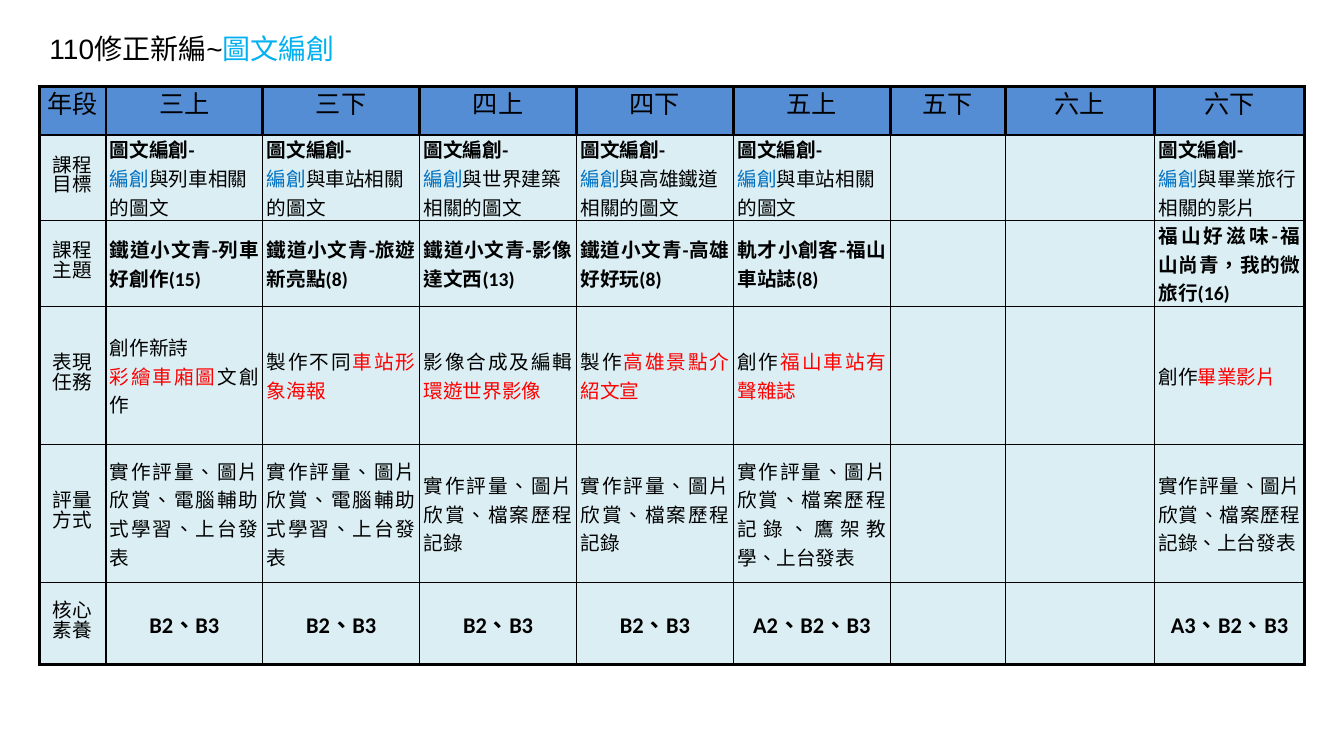
from lxml.etree import SubElement
from pptx import Presentation
from pptx.dml.color import RGBColor
from pptx.enum.text import MSO_ANCHOR, MSO_AUTO_SIZE, PP_ALIGN
from pptx.oxml.ns import qn
from pptx.util import Inches, Pt

BLACK = RGBColor(0x00, 0x00, 0x00)
SKY = RGBColor(0x00, 0xB0, 0xF0)
BLUE = RGBColor(0x00, 0x70, 0xC0)
RED = RGBColor(0xFF, 0x00, 0x00)
HEADER_FILL = RGBColor(0x54, 0x8D, 0xD4)
BODY_FILL = RGBColor(0xDA, 0xEE, 0xF3)

# Content: [brackets] enclose highlighted words, a line break starts a paragraph
TITLE = "110修正新編~[圖文編創]"
HEADERS = ["年段", "三上", "三下", "四上", "四下", "五上", "五下", "六上", "六下"]
GOALS = ["列車相關的圖文", "車站相關的圖文", "世界建築相關的圖文",
         "高雄鐵道相關的圖文", "車站相關的圖文", "", "", "畢業旅行相關的影片"]
THEMES = ["鐵道小文青-列車好創作(15)", "鐵道小文青-旅遊新亮點(8)",
          "鐵道小文青-影像達文西(13)", "鐵道小文青-高雄好好玩(8)",
          "軌才小創客-福山車站誌(8)", "", "", "福山好滋味-福山尚青，我的微旅行(16)"]
TASKS = ["創作新詩\n[彩繪車廂圖]文創作", "製作不同[車站形象海報]",
         "影像合成及編輯[環遊世界影像]", "製作[高雄景點介紹文宣]",
         "創作[福山車站有聲雜誌]", "", "", "創作[畢業影片]"]
COMPUTER = "實作評量、圖片欣賞、電腦輔助式學習、上台發表"
RECORD = "實作評量、圖片欣賞、檔案歷程記錄"
ASSESSMENTS = [COMPUTER, COMPUTER, RECORD, RECORD, RECORD + "、鷹架教學、上台發表",
               "", "", RECORD + "、上台發表"]
COMPETENCIES = ["B2、B3"] * 4 + ["A2、B2、B3", "", "", "A3、B2、B3"]

# Rows: label, cells, alignment, size, number of bold paragraphs, highlight
ROWS = [
    ("課程\n目標", [goal and f"圖文編創-\n[編創]與{goal}" for goal in GOALS],
     PP_ALIGN.LEFT, 14, 1, BLUE),
    ("課程主題", THEMES, PP_ALIGN.JUSTIFY, 14, 1, BLACK),
    ("表現任務", TASKS, PP_ALIGN.JUSTIFY, 14, 0, RED),
    ("評量方式", ASSESSMENTS, PP_ALIGN.JUSTIFY, 14, 0, BLACK),
    ("核心\n素養", COMPETENCIES, PP_ALIGN.CENTER, 16, 1, BLACK),
]

# Grid in inches: five equal terms share what the other columns leave
LEFT, TOP, TABLE_WIDTH = 0.39, 0.86, 12.55
LABEL_WIDTH, LAST_WIDTHS = 0.66, [1.14, 1.48, 1.49]
TERM_WIDTH = (TABLE_WIDTH - LABEL_WIDTH - sum(LAST_WIDTHS)) / 5
COLUMN_WIDTHS = [LABEL_WIDTH] + [TERM_WIDTH] * 5 + LAST_WIDTHS
ROW_HEIGHTS = [0.48, 0.81, 0.81, 1.37, 1.37, 0.81]
THIN, THICK = 1, 2.25


def write(text_frame, text, font, size, align, highlight, bold_count=0, spacing=None):
    for index, line in enumerate(text.split("\n")):
        paragraph = text_frame.paragraphs[0] if index == 0 else text_frame.add_paragraph()
        paragraph.alignment = align
        # Keep punctuation inside the cell
        paragraph._p.get_or_add_pPr().set("hangingPunct", "0")
        if spacing:
            paragraph.line_spacing = spacing
        for position, part in enumerate(line.replace("]", "[").split("[")):
            if not part:
                continue
            run = paragraph.add_run()
            run.text = part
            run.font.name = font
            run.font.size = Pt(size)
            run.font.bold = index < bold_count
            run.font.color.rgb = highlight if position % 2 else BLACK
            # Traditional Chinese punctuation and line breaking
            run._r.get_or_add_rPr().set("lang", "zh-TW")


def set_borders(cell, widths):
    properties = cell._tc.get_or_add_tcPr()
    for index, (side, width) in enumerate(widths.items()):
        line = properties.makeelement(qn(f"a:ln{side}"), {"w": str(Pt(width))})
        fill = SubElement(line, qn("a:solidFill"))
        SubElement(fill, qn("a:srgbClr"), val=str(BLACK))
        properties.insert(index, line)


def fill_cell(table, row, column, text, *style):
    cell = table.cell(row, column)
    cell.margin_left = cell.margin_right = Inches(0.04)
    cell.margin_top = cell.margin_bottom = 0
    cell.vertical_anchor = MSO_ANCHOR.MIDDLE
    cell.fill.solid()
    cell.fill.fore_color.rgb = BODY_FILL if row else HEADER_FILL
    # Heavy lines surround the table, the header cells and the label column
    heavy = {"L": row == 0 or column < 2,
             "R": row == 0 or column in (0, len(COLUMN_WIDTHS) - 1),
             "T": row < 2,
             "B": row in (0, len(ROW_HEIGHTS) - 1)}
    set_borders(cell, {side: THICK if thick else THIN for side, thick in heavy.items()})
    write(cell.text_frame, text, "Calibri", *style)


def build_title(slide):
    title = slide.shapes.title
    title.left, title.top = Inches(LEFT), Inches(0.26)
    title.width, title.height = Inches(3.55), Inches(0.44)
    text_frame = title.text_frame
    text_frame.auto_size = MSO_AUTO_SIZE.NONE
    text_frame.word_wrap = True
    text_frame.vertical_anchor = MSO_ANCHOR.TOP
    write(text_frame, TITLE, "Arial", 20, PP_ALIGN.LEFT, SKY, spacing=1.0)
    text_frame.paragraphs[0].space_before = Pt(0)


def build_table(slide):
    table = slide.shapes.add_table(
        len(ROW_HEIGHTS), len(COLUMN_WIDTHS), Inches(LEFT), Inches(TOP),
        Inches(TABLE_WIDTH), Inches(sum(ROW_HEIGHTS))).table
    table.first_row = table.horz_banding = False
    for column, width in zip(table.columns, COLUMN_WIDTHS):
        column.width = Inches(width)
    for row, height in zip(table.rows, ROW_HEIGHTS):
        row.height = Inches(height)

    # Header row
    for column, text in enumerate(HEADERS):
        fill_cell(table, 0, column, text, 18, PP_ALIGN.CENTER, BLACK, 0, Pt(14))
    # Label column and term cells
    for row, (label, cells, align, size, bold_count, highlight) in enumerate(ROWS, 1):
        fill_cell(table, row, 0, label, 14, PP_ALIGN.CENTER, BLACK, 0, Pt(14))
        for column, text in enumerate(cells, 1):
            fill_cell(table, row, column, text, size, align, highlight, bold_count)


def main():
    presentation = Presentation()
    presentation.slide_width, presentation.slide_height = Inches(13.33), Inches(7.5)
    slide = presentation.slides.add_slide(presentation.slide_layouts[5])
    build_title(slide)
    build_table(slide)
    presentation.save("out.pptx")


if __name__ == "__main__":
    main()
